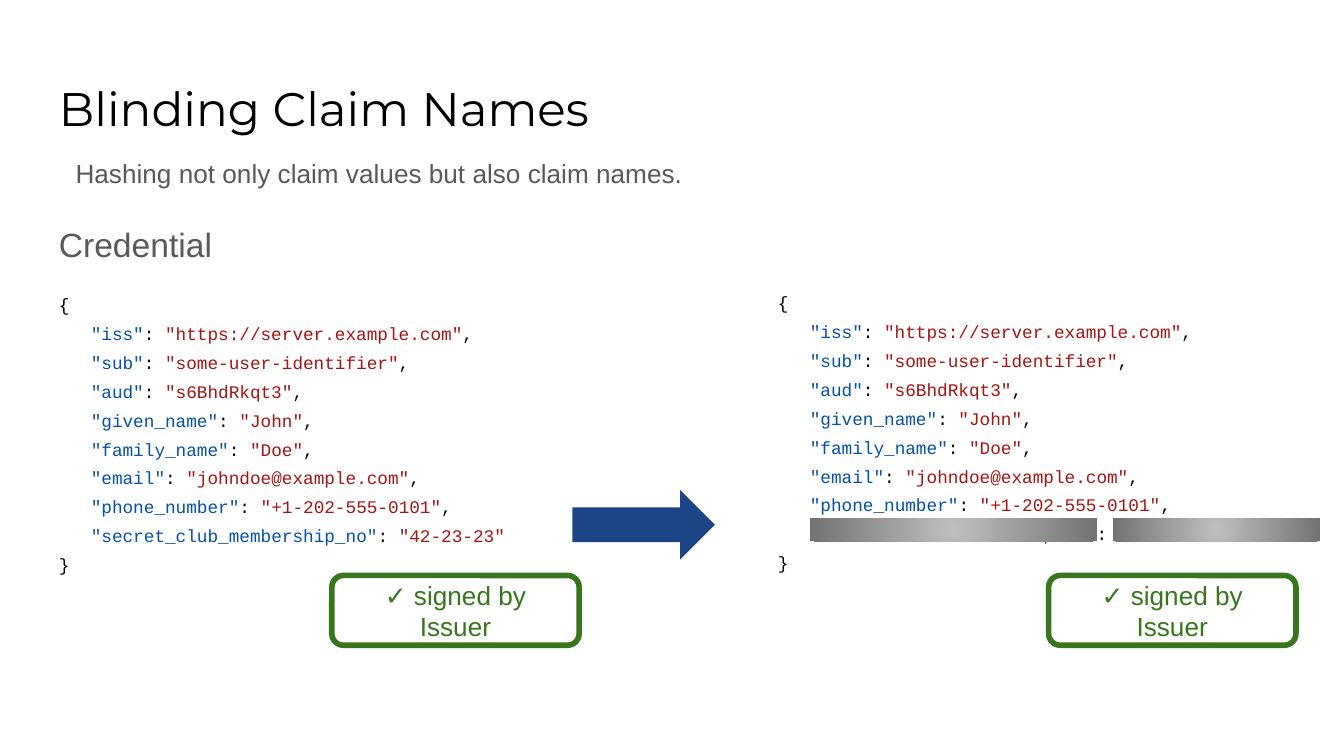
from lxml import etree
from pptx import Presentation
from pptx.dml.color import RGBColor
from pptx.enum.shapes import MSO_SHAPE as Shape
from pptx.enum.text import MSO_ANCHOR as Anchor, PP_ALIGN as Align
from pptx.oxml.ns import qn
from pptx.util import Pt

BLACK = RGBColor(0x00, 0x00, 0x00)
WHITE = RGBColor(0xFF, 0xFF, 0xFF)
GREY = RGBColor(0x59, 0x59, 0x59)
KEY_BLUE = RGBColor(0x04, 0x51, 0xA5)
VALUE_RED = RGBColor(0xA3, 0x15, 0x15)
ARROW_BLUE = RGBColor(0x1C, 0x45, 0x87)
GREEN = RGBColor(0x38, 0x76, 0x1D)
BAR_CENTRE = RGBColor(0xBF, 0xBF, 0xBF)
BAR_EDGE = RGBColor(0x73, 0x73, 0x73)

MARGIN = 7.2
CODE_SIZE = 9.5
CODE_INDENT = 17.1
HEADING_HEIGHT = 35.8

CLAIMS = {
    "iss": "https://server.example.com",
    "sub": "some-user-identifier",
    "aud": "s6BhdRkqt3",
    "given_name": "John",
    "family_name": "Doe",
    "email": "johndoe@example.com",
    "phone_number": "+1-202-555-0101",
    "secret_club_membership_no": "42-23-23",
}


def add_run(para, text, size, color, font="Arial"):
    span = para.add_run()
    span.text = text
    span.font.size = Pt(size)
    span.font.name = font
    span.font.color.rgb = color


def prepare_frame(shape, top=MARGIN):
    """Turn on wrapping, set the insets and return the text frame."""
    frame = shape.text_frame
    frame.word_wrap = True
    frame.margin_left = frame.margin_right = frame.margin_bottom = Pt(MARGIN)
    frame.margin_top = Pt(top)
    return frame


deck = Presentation()
deck.slide_width, deck.slide_height = Pt(720), Pt(405)
page = deck.slides.add_slide(deck.slide_layouts[6])
shapes = page.shapes

# Title
title = shapes.add_textbox(Pt(24.5), Pt(35.3), Pt(671), Pt(45.4))
para = prepare_frame(title).paragraphs[0]
add_run(para, "Blinding Claim Names", 25.2, BLACK, "Montserrat")

# Credential listings; the right one leaves the heading's space empty
for left, heading in ((24.5, "Credential"), (409.7, None)):
    listing = shapes.add_textbox(Pt(left), Pt(109.4), Pt(260), Pt(282))
    frame = prepare_frame(listing, MARGIN if heading else MARGIN + HEADING_HEIGHT)
    para = frame.paragraphs[0]
    if heading:
        para.line_spacing = 1.15
        add_run(para, heading, 18, GREY)
        para = frame.add_paragraph()
        para.space_before = Pt(12)

    para.line_spacing = 1.36
    add_run(para, "{", CODE_SIZE, BLACK, "Courier New")
    for number, (name, value) in enumerate(CLAIMS.items(), 1):
        para = frame.add_paragraph()
        para.line_spacing = 1.36
        para._p.get_or_add_pPr().set("marL", str(Pt(CODE_INDENT)))
        parts = [(f'"{name}"', KEY_BLUE), (": ", BLACK), (f'"{value}"', VALUE_RED)]
        if number < len(CLAIMS):
            parts.append((",", BLACK))
        for text, color in parts:
            add_run(para, text, CODE_SIZE, color, "Courier New")
    para = frame.add_paragraph()
    para.line_spacing = 1.36
    add_run(para, "}", CODE_SIZE, BLACK, "Courier New")

# Bars that blind the last claim's value and name
for left, width in ((596, 111.3), (434, 153.6)):
    bar = shapes.add_shape(Shape.RECTANGLE, Pt(left), Pt(277.7), Pt(width), Pt(12.2))
    bar.shadow.inherit = False
    bar.line.fill.background()
    bar.fill.gradient()
    for stop, color in zip(bar.fill.gradient_stops, (BAR_CENTRE, BAR_EDGE)):
        stop.color.rgb = color
    gradient = bar._element.spPr.find(qn("a:gradFill"))
    gradient.remove(gradient.find(qn("a:lin")))
    radial = etree.SubElement(gradient, qn("a:path"))
    radial.set("path", "circle")
    focus = etree.SubElement(radial, qn("a:fillToRect"))
    for side in "ltrb":
        focus.set(side, "50000")

# Arrow between the listings
arrow = shapes.add_shape(Shape.RIGHT_ARROW, Pt(306.7), Pt(262.5), Pt(76.3), Pt(37.3))
arrow.shadow.inherit = False
arrow.fill.solid()
arrow.fill.fore_color.rgb = ARROW_BLUE
arrow.line.fill.background()

# Signature badges
for left in (177.8, 561.8):
    badge = shapes.add_shape(Shape.ROUNDED_RECTANGLE, Pt(left), Pt(308.3), Pt(132.5), Pt(37.4))
    badge.shadow.inherit = False
    badge.fill.solid()
    badge.fill.fore_color.rgb = WHITE
    badge.line.color.rgb = GREEN
    badge.line.width = Pt(3)
    frame = prepare_frame(badge)
    frame.vertical_anchor = Anchor.MIDDLE
    para = frame.paragraphs[0]
    para.alignment = Align.CENTER
    add_run(para, "✓ signed by Issuer", 14, GREEN)

# Subtitle
subtitle = shapes.add_textbox(Pt(33.4), Pt(74.9), Pt(662), Pt(28.8))
para = prepare_frame(subtitle).paragraphs[0]
para.line_spacing = 1.15
para.space_after = Pt(12)
add_run(para, "Hashing not only claim values but also claim names.", 14, GREY)

deck.save("out.pptx")
